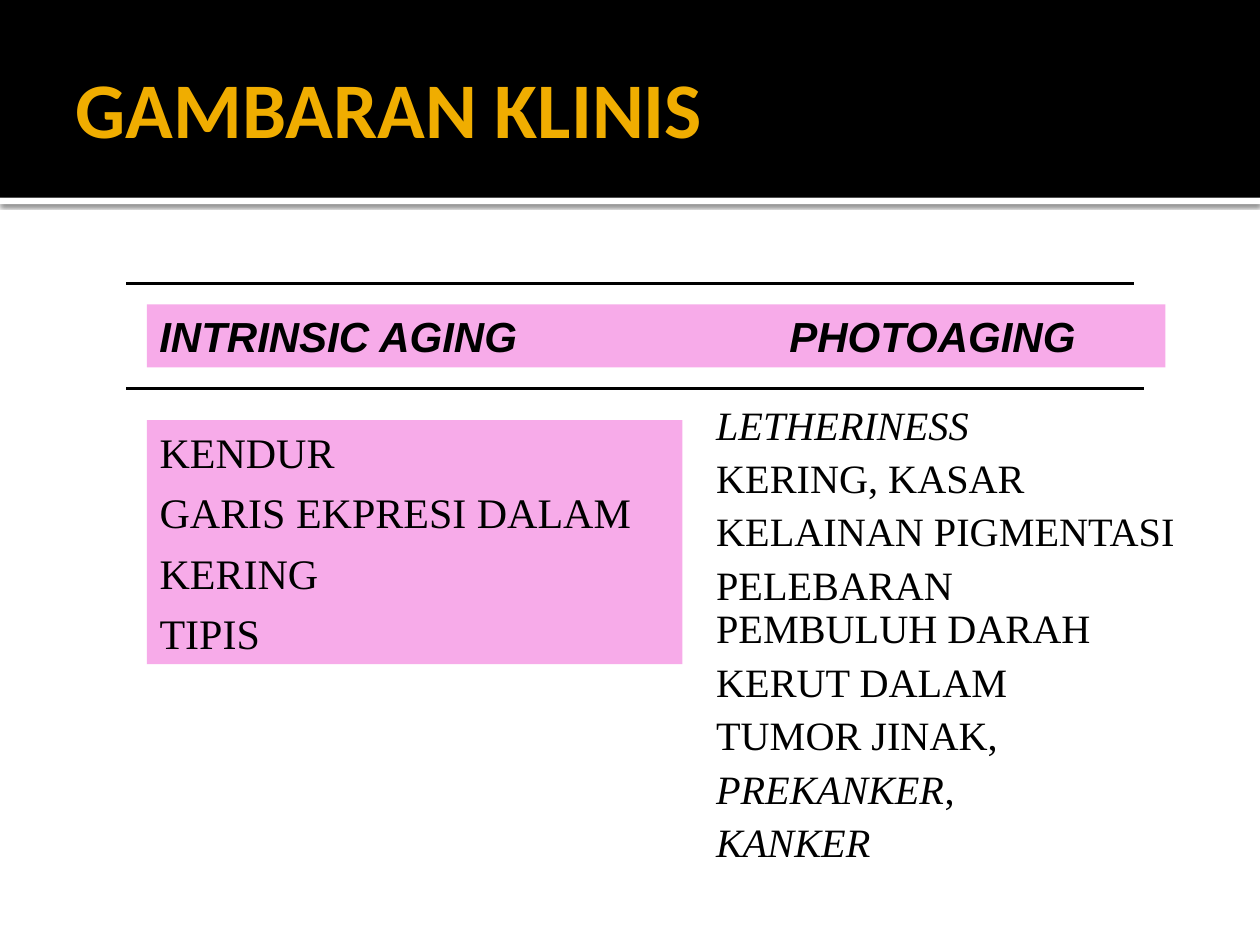
from lxml.etree import SubElement
from pptx import Presentation
from pptx.dml.color import RGBColor
from pptx.enum.shapes import MSO_CONNECTOR, MSO_SHAPE
from pptx.enum.text import MSO_ANCHOR, MSO_AUTO_SIZE, PP_ALIGN
from pptx.oxml.ns import qn
from pptx.util import Inches, Pt

COLORS = {"black": "000000", "white": "FFFFFF", "pink": "F7ABE9", "gold": "F0AD00"}
TITLE = {"name": "Calibri", "size": Pt(45), "bold": True}
HEADING = {"name": "Arial", "size": Pt(24), "bold": True, "italic": True}
LEFT_LIST = {"name": "Times New Roman", "size": Pt(24)}
RIGHT_LIST = {"name": "Times New Roman", "size": Pt(23)}


class Deck:
    columns, rows = 120, 90

    def __init__(self):
        self.prs = Presentation()
        self.prs.slide_width, self.prs.slide_height = Inches(10), Inches(7.5)
        self.s = self.prs.slides.add_slide(self.prs.slide_layouts[3])

    def color(self, name):
        return RGBColor.from_string(COLORS[name])

    def grid(self, col, row):
        return (round(self.prs.slide_width * col / self.columns),
                round(self.prs.slide_height * row / self.rows))

    def place(self, sp, col, row, width, height):
        sp.left, sp.top = self.grid(col, row)
        sp.width, sp.height = self.grid(width, height)

    def box(self, area, fill):
        col, row, width, height = area
        sp = self.s.shapes.add_shape(MSO_SHAPE.RECTANGLE, *self.grid(col, row),
                                     *self.grid(width, height))
        sp.shadow.inherit = False
        sp.fill.solid()
        sp.fill.fore_color.rgb = self.color(fill)
        sp.line.fill.background()
        return sp

    def band(self, area, fill):
        sp = self.box(area, fill)
        sp.element.getparent().insert(2, sp.element)
        return sp

    def soft_shadow(self, sp):
        effects = sp.element.spPr.find(qn("a:effectLst"))
        shadow = SubElement(effects, qn("a:outerShdw"), blurRad=str(Pt(2.5)),
                            dist=str(Pt(0.8)), dir="5400000", rotWithShape="0")
        tint = SubElement(shadow, qn("a:srgbClr"), val=COLORS["black"])
        SubElement(tint, qn("a:alpha"), val="60000")

    def rule(self, start, end, row):
        line = self.s.shapes.add_connector(MSO_CONNECTOR.STRAIGHT, *self.grid(start, row),
                                           *self.grid(end, row))
        line.line.width = Pt(2.25)
        line.line.color.rgb = self.color("black")
        SubElement(line.element.spPr, qn("a:effectLst"))

    def add_text(self, p, text, font, color="black", **changes):
        r = p.add_run()
        r.text = text
        for key, value in {**font, **changes}.items():
            setattr(r.font, key, value)
        r.font.color.rgb = self.color(color)

    def frame(self, sp, anchor):
        tf = sp.text_frame
        settings = {"word_wrap": True, "auto_size": MSO_AUTO_SIZE.NONE,
                    "vertical_anchor": anchor}
        for key, value in settings.items():
            setattr(tf, key, value)
        return tf

    def title(self, text, area):
        sp = self.s.shapes.title
        self.place(sp, *area)
        p = self.frame(sp, MSO_ANCHOR.MIDDLE).paragraphs[0]
        p.alignment = PP_ALIGN.LEFT
        self.add_text(p, text, TITLE, "gold")

    def heading(self, text, area, fill, tab):
        p = self.frame(self.box(area, fill), MSO_ANCHOR.MIDDLE).paragraphs[0]
        p.alignment = PP_ALIGN.LEFT
        tabs = SubElement(p._p.get_or_add_pPr(), qn("a:tabLst"))
        SubElement(tabs, qn("a:tab"), pos=str(self.grid(tab, 0)[0]), algn="l")
        self.add_text(p, text, HEADING)

    def listing(self, index, items, area, fill, font, spacing):
        sp = self.s.placeholders[index]
        self.place(sp, *area)
        sp.fill.solid()
        sp.fill.fore_color.rgb = self.color(fill)
        tf = self.frame(sp, MSO_ANCHOR.TOP)
        for i, runs in enumerate(items):
            p = tf.add_paragraph() if i else tf.paragraphs[0]
            p.line_spacing = spacing
            p.space_before = Pt(5.7)
            pPr = p._p.get_or_add_pPr()
            pPr.set("marL", "0")
            pPr.set("indent", "0")
            SubElement(pPr, qn("a:buNone"))
            for text, italic in runs:
                self.add_text(p, text, font, italic=italic)


def main():
    deck = Deck()
    deck.band((0, 0, 120, 18.84), "black")
    deck.soft_shadow(deck.band((0, 18.84, 120, 0.6), "white"))
    deck.title("GAMBARAN KLINIS", (6, 2, 108, 16.4))
    deck.heading("INTRINSIC AGING\tPHOTOAGING", (14, 29, 97, 6), "pink", 60)
    intrinsic = ["KENDUR", "GARIS EKPRESI DALAM", "KERING", "TIPIS"]
    deck.listing(1, [[(text, False)] for text in intrinsic],
                 (14, 40, 51, 23.25), "pink", LEFT_LIST, 1.0)
    photoaging = [
        [("LETHERINESS", True)],
        [("KERING, KASAR", False)],
        [("KELAINAN PIGMENTASI", False)],
        [("PELEBARAN PEMBULUH DARAH", False)],
        [("KERUT DALAM", False)],
        [("TUMOR JINAK,", False)],
        [("PREKANKER", True), (",", False)],
        [("KANKER", True)],
    ]
    deck.listing(2, photoaging, (67, 38, 46.6, 52), "white", RIGHT_LIST, 0.9)
    deck.rule(12, 109, 37)
    deck.rule(12, 108, 27)
    deck.prs.save("out.pptx")


if __name__ == "__main__":
    main()
